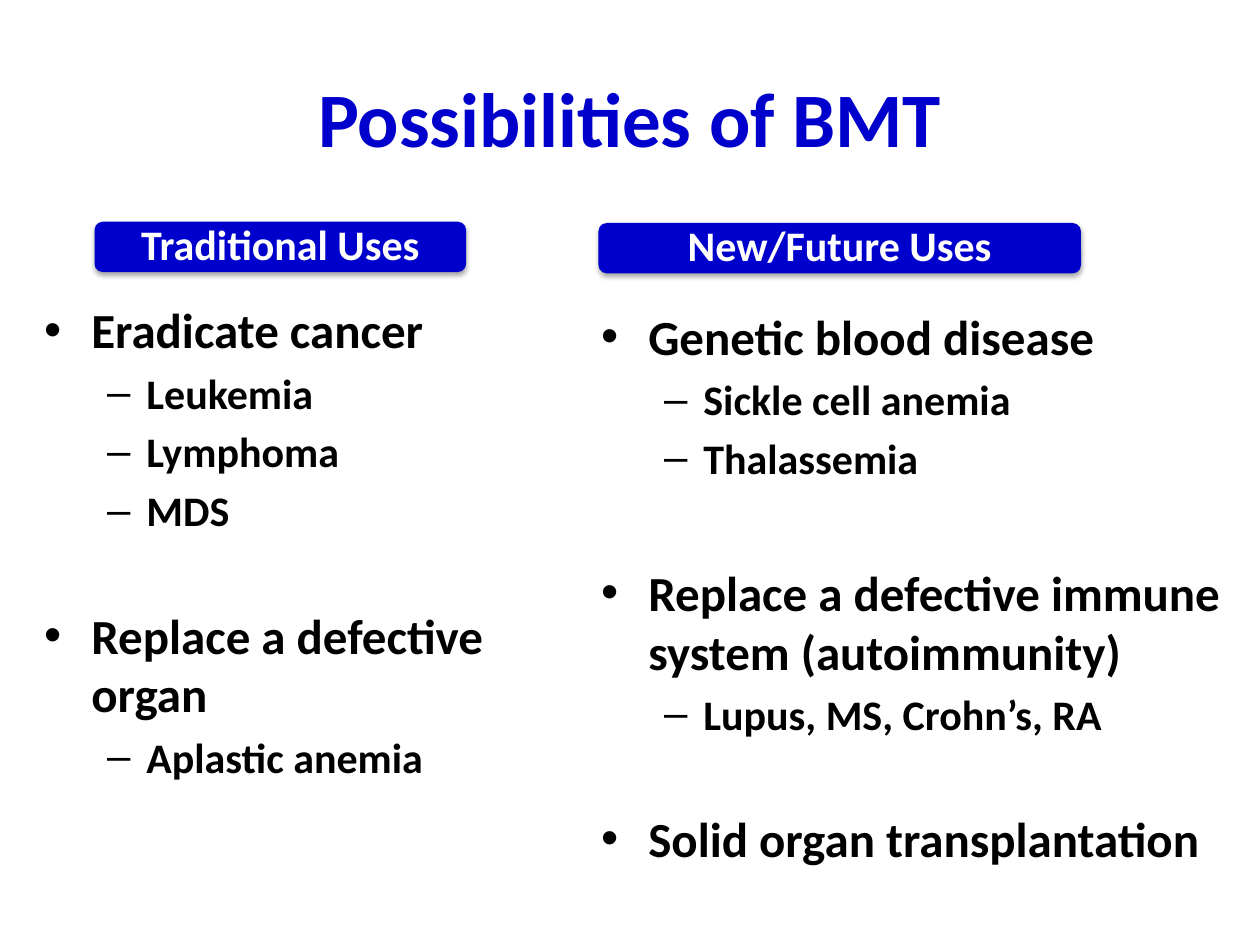
from lxml.etree import SubElement
from pptx import Presentation
from pptx.dml.color import RGBColor
from pptx.enum.shapes import MSO_SHAPE
from pptx.enum.text import MSO_ANCHOR, PP_ALIGN
from pptx.oxml.ns import qn
from pptx.util import Inches, Pt

BLUE = RGBColor(0x00, 0x00, 0xCC)
BLACK = RGBColor(0x00, 0x00, 0x00)
WHITE = RGBColor(0xFF, 0xFF, 0xFF)

LEVEL_SIZES = (28, 24)

# Each item: level, text, space before in points (None keeps the template's)
TRADITIONAL = [
    (0, "Eradicate cancer", None),
    (1, "Leukemia", None),
    (1, "Lymphoma", None),
    (1, "MDS", None),
    (0, "Replace a defective organ", 40),
    (1, "Aplastic anemia", None),
]
FUTURE = [
    (0, "Genetic blood disease", None),
    (1, "Sickle cell anemia", None),
    (1, "Thalassemia", None),
    (0, "Replace a defective immune system (autoimmunity)", 45.5),
    (1, "Lupus, MS, Crohn’s, RA", None),
    (0, "Solid organ transplantation", 40),
]


def place(sp, left, top, width, height):
    box = {"left": left, "top": top, "width": width, "height": height}
    for name, value in box.items():
        setattr(sp, name, Inches(value))


def add_run(p, text, size, color):
    r = p.add_run()
    r.text = text
    for name, value in {"name": "Calibri", "size": Pt(size), "bold": True}.items():
        setattr(r.font, name, value)
    r.font.color.rgb = color


def add_shadow(sp):
    sp.shadow.inherit = False
    effects = sp._element.spPr.find(qn("a:effectLst"))
    shadow = SubElement(effects, qn("a:outerShdw"), blurRad=str(Pt(3.1)),
                        dist=str(Pt(1.8)), dir="5400000", rotWithShape="0")
    color = SubElement(shadow, qn("a:srgbClr"), val=str(BLACK))
    SubElement(color, qn("a:alpha"), val="35000")


def fill_list(sp, items, *box):
    place(sp, *box)
    tf = sp.text_frame
    for i, (level, text, gap) in enumerate(items):
        p = tf.add_paragraph() if i else tf.paragraphs[0]
        p.level = level
        if gap:
            p.space_before = Pt(gap)
        add_run(p, text, LEVEL_SIZES[level], BLACK)


def add_heading(s, text, *box):
    sp = s.shapes.add_shape(MSO_SHAPE.ROUNDED_RECTANGLE, *map(Inches, box))
    sp.fill.solid()
    sp.fill.fore_color.rgb = BLUE
    sp.line.fill.background()
    add_shadow(sp)
    tf = sp.text_frame
    margins = {"margin_left": 0.07, "margin_right": 0.07,
               "margin_top": 0.04, "margin_bottom": 0.04}
    for name, value in margins.items():
        setattr(tf, name, Inches(value))
    tf.vertical_anchor = MSO_ANCHOR.MIDDLE
    p = tf.paragraphs[0]
    p.alignment = PP_ALIGN.CENTER
    p.line_spacing = 0.9
    add_run(p, text, 24, WHITE)


def main():
    prs = Presentation()
    prs.slide_width, prs.slide_height = Inches(10), Inches(7.5)
    s = prs.slides.add_slide(prs.slide_layouts[3])
    title, left, right = list(s.placeholders)[:3]

    # Title
    place(title, 0.5, 0.3, 9, 1.25)
    add_run(title.text_frame.paragraphs[0], "Possibilities of BMT", 44, BLUE)

    # Two lists
    fill_list(left, TRADITIONAL, 0.25, 2.33, 4.42, 4.95)
    fill_list(right, FUTURE, 4.67, 2.38, 5.25, 4.95)

    # Column headings
    add_heading(s, "Traditional Uses", 0.75, 1.76, 2.95, 0.4)
    add_heading(s, "New/Future Uses", 4.75, 1.77, 3.83, 0.4)

    prs.save("out.pptx")


if __name__ == "__main__":
    main()
